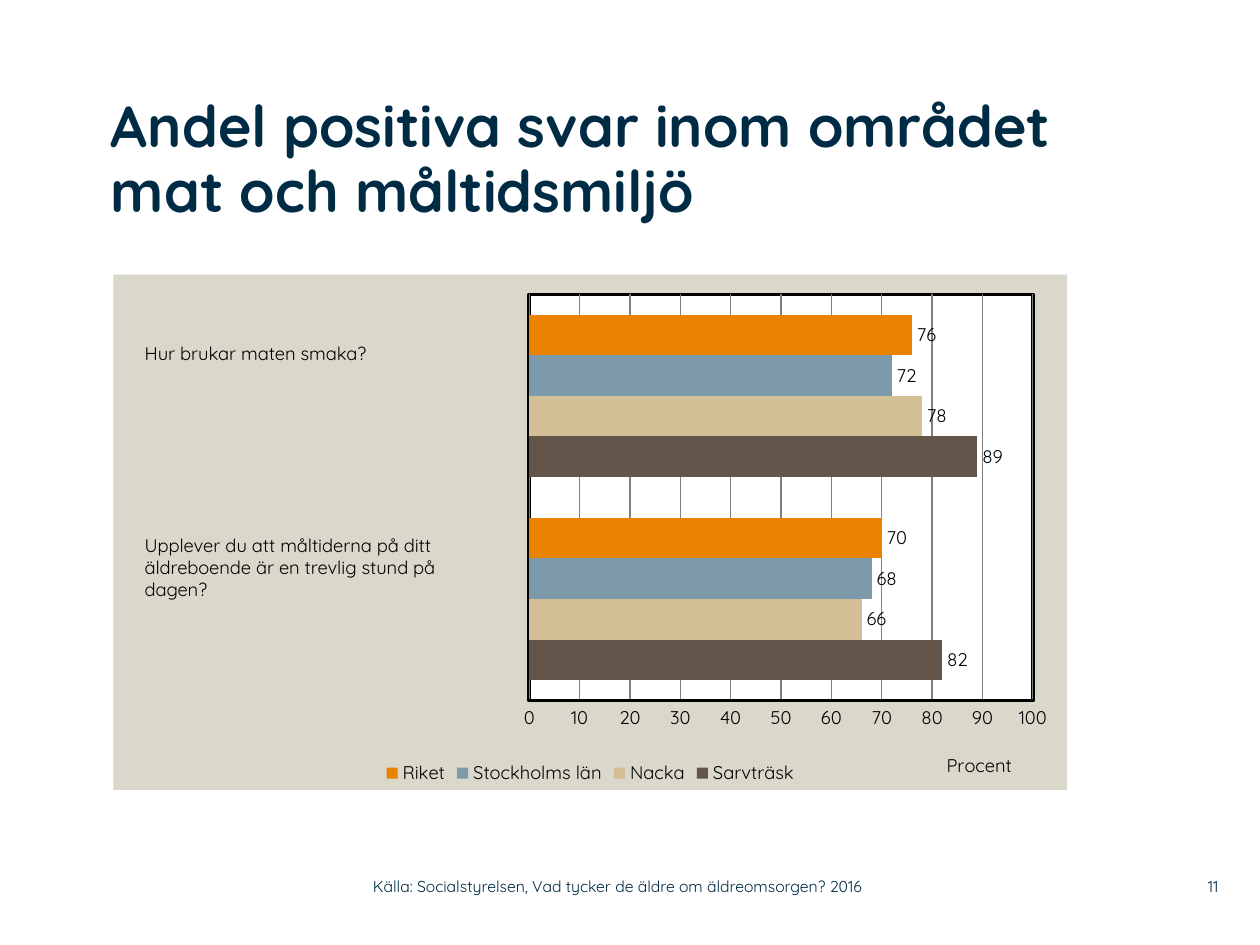
from lxml import etree
from pptx import Presentation
from pptx.chart.data import CategoryChartData
from pptx.dml.color import RGBColor
from pptx.enum.chart import XL_CHART_TYPE, XL_LABEL_POSITION, XL_LEGEND_POSITION, XL_TICK_MARK
from pptx.enum.text import MSO_ANCHOR, PP_ALIGN
from pptx.oxml import parse_xml
from pptx.oxml.ns import nsdecls, qn
from pptx.util import Inches, Pt

BAR = XL_CHART_TYPE.BAR_CLUSTERED
OUTSIDE = XL_LABEL_POSITION.OUTSIDE_END
BOTTOM = XL_LEGEND_POSITION.BOTTOM
NO_TICK = XL_TICK_MARK.NONE
TOP, MIDDLE = MSO_ANCHOR.TOP, MSO_ANCHOR.MIDDLE
LEFT, RIGHT = PP_ALIGN.LEFT, PP_ALIGN.RIGHT

FONT = "Quicksand"
NAVY, BLACK, GRID = "002B45", "000000", "808080"


def style_font(font, size, color, bold=False):
    font.name = FONT
    font.size = Pt(size)
    font.bold = bold
    font.color.rgb = RGBColor.from_string(color)


def set_layout(parent, index, target="", **shares):
    """Place a chart part by shares of the chart's size."""
    for old in parent.findall(qn("c:layout")):
        parent.remove(old)
    layout = parse_xml(f"<c:layout {nsdecls('c')}><c:manualLayout/></c:layout>")
    settings = {"layoutTarget": target} if target else {}
    settings.update(xMode="edge", yMode="edge", **shares)
    for tag, value in settings.items():
        etree.SubElement(layout[0], qn(f"c:{tag}")).set("val", str(value))
    parent.insert(index, layout)


presentation = Presentation()
presentation.slide_width = Inches(10)
presentation.slide_height = Inches(7.5)
column = presentation.slide_width / 100  # one percent of the width
row = presentation.slide_height / 100  # one percent of the height
slide = presentation.slides.add_slide(presentation.slide_layouts[6])

# Chart data, listed from the lowest bar up
series_rows = [
    ("Sarvträsk", (82, 89), "635549"),
    ("Nacka", (66, 78), "D3BF96"),
    ("Stockholms län", (68, 72), "7D9AAA"),
    ("Riket", (70, 76), "E98300"),
]
chart_data = CategoryChartData()
chart_data.categories = ["1", "2"]
for name, values, _ in series_rows:
    chart_data.add_series(name, values)
chart = slide.shapes.add_chart(
    BAR, int(9 * column), int(29.07 * row), int(75.7 * column), int(54.53 * row), chart_data
).chart
style_font(chart.font, 10.5, BLACK)
chart.has_title = False

# Bars and their values
plot = chart.plots[0]
plot.gap_width = 100
plot.overlap = 0
plot.vary_by_categories = False
for series, (_, _, color) in zip(plot.series, series_rows):
    series.format.fill.solid()
    series.format.fill.fore_color.rgb = RGBColor.from_string(color)
    labels = series.data_labels
    labels.show_value = True
    labels.position = OUTSIDE
    style_font(labels.font, 10.5, BLACK)

# Axes
chart.category_axis.visible = False
value_axis = chart.value_axis
value_axis.minimum_scale = 0
value_axis.maximum_scale = 100
value_axis.major_unit = 10
value_axis.major_tick_mark = NO_TICK
value_axis.minor_tick_mark = NO_TICK
style_font(value_axis.tick_labels.font, 10.5, BLACK)
value_axis.has_major_gridlines = True
axis_lines = [(value_axis.format.line, BLACK, 2), (value_axis.major_gridlines.format.line, GRID, 0.75)]
for line, color, width in axis_lines:
    line.color.rgb = RGBColor.from_string(color)
    line.width = Pt(width)
axis_title = value_axis.axis_title
run = axis_title.text_frame.paragraphs[0].add_run()
run.text = "Procent"
style_font(run.font, 10.5, BLACK)
set_layout(axis_title._element, 1, x=0.87, y=0.92)

# Legend
chart.has_legend = True
chart.legend.position = BOTTOM
chart.legend.include_in_layout = False
style_font(chart.legend.font, 10.5, BLACK)

# Chart and plot backgrounds
chart_space = chart._chartSpace
plot_area = chart_space.chart.plotArea
set_layout(plot_area, 0, "inner", x=0.436, y=0.038, w=0.528, h=0.789)
plot_border = f'<a:ln w="{Pt(2)}"><a:solidFill><a:srgbClr val="{BLACK}"/></a:solidFill></a:ln>'
plot_area.append(parse_xml(
    f'<c:spPr {nsdecls("c", "a")}><a:solidFill><a:srgbClr val="FFFFFF"/></a:solidFill>{plot_border}</c:spPr>'))
chart_space.chart.addnext(parse_xml(
    f'<c:spPr {nsdecls("c", "a")}><a:solidFill><a:srgbClr val="DAD7CB"/></a:solidFill>'
    "<a:ln><a:noFill/></a:ln></c:spPr>"))

# Title, questions, page number and source:
# left, top, width, height (percent), paragraphs, size, color, bold, inset, anchor, alignment, spacing
texts = [
    (8.8, 10, 84.2, 18.93, ["Andel positiva svar inom området mat och måltidsmiljö"],
     33, NAVY, True, False, TOP, LEFT, 0.95),
    (10.5, 35.6, 29.7, 3.73, ["Hur brukar maten smaka?"], 10.5, BLACK, False, True, TOP, LEFT, 1),
    (10.5, 55.87, 29.3, 8.4,
     ["Upplever du att måltiderna på ditt äldreboende är en trevlig stund på", "dagen?"],
     10.5, BLACK, False, True, TOP, LEFT, 1),
    (92, 91.87, 4.7, 3.87, ["11"], 9, NAVY, False, False, MIDDLE, RIGHT, 1),
    (29.6, 91.87, 44.3, 3.87, ["Källa: Socialstyrelsen, Vad tycker de äldre om äldreomsorgen? 2016"],
     9, NAVY, False, False, MIDDLE, LEFT, 1),
]
for left, top, width, height, lines, size, color, bold, inset, anchor, alignment, spacing in texts:
    box = slide.shapes.add_textbox(
        int(left * column), int(top * row), int(width * column), int(height * row))
    frame = box.text_frame
    frame.word_wrap = True
    frame.vertical_anchor = anchor
    if not inset:
        frame.margin_left = frame.margin_right = frame.margin_top = frame.margin_bottom = 0
    for number, text in enumerate(lines):
        paragraph = frame.add_paragraph() if number else frame.paragraphs[0]
        paragraph.alignment = alignment
        paragraph.line_spacing = spacing
        run = paragraph.add_run()
        run.text = text
        style_font(run.font, size, color, bold)

presentation.save("out.pptx")
